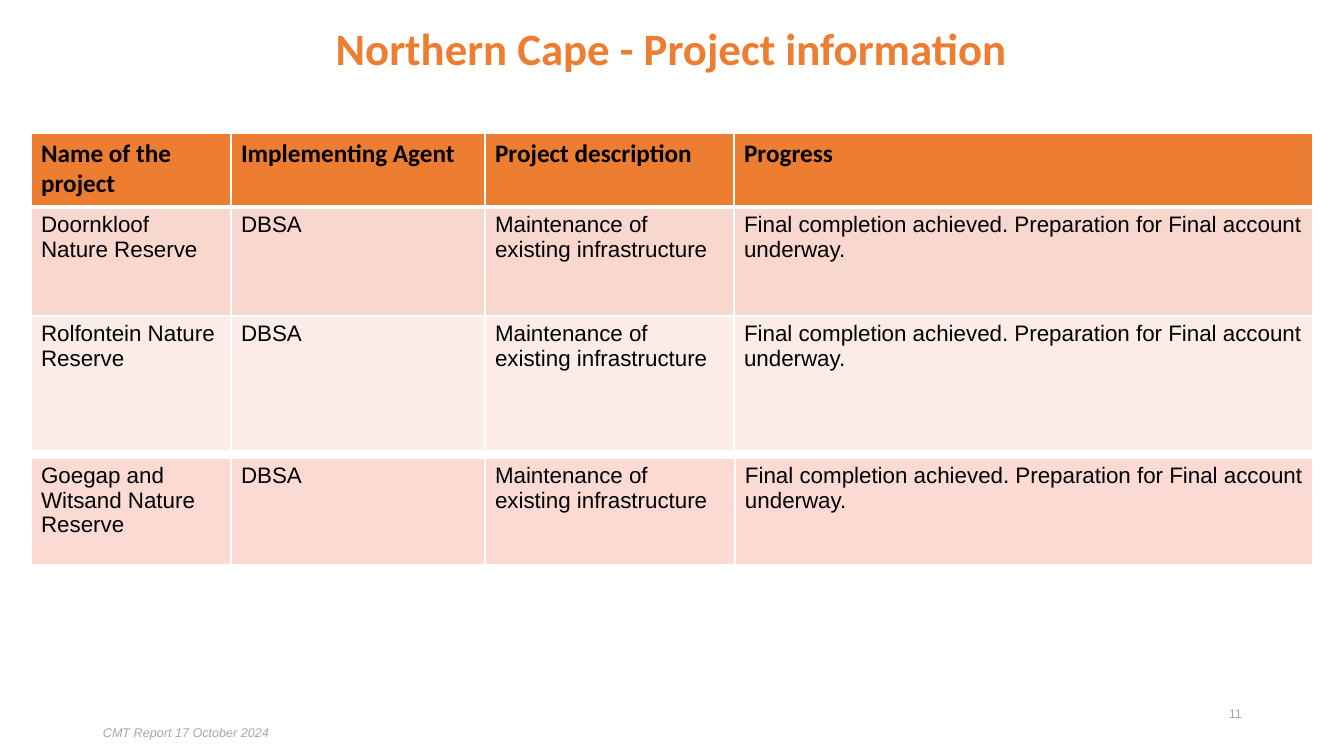
"""Build the Northern Cape project information slide."""
from dataclasses import dataclass

from lxml import etree
from pptx import Presentation
from pptx.dml.color import RGBColor
from pptx.enum.text import MSO_ANCHOR, MSO_AUTO_SIZE, PP_ALIGN
from pptx.oxml.ns import qn
from pptx.util import Emu, Pt

LEFT, CENTER, RIGHT, JUSTIFY = PP_ALIGN.LEFT, PP_ALIGN.CENTER, PP_ALIGN.RIGHT, PP_ALIGN.JUSTIFY
MIDDLE = MSO_ANCHOR.MIDDLE
NO_FIT = MSO_AUTO_SIZE.NONE
TITLE_ONLY = 5
THIN, THICK = 1, 3


@dataclass(frozen=True)
class Theme:
    """Colours, fonts and type sizes of the slide."""
    accent: str = "ED7D31"
    ink: str = "000000"
    muted: str = "A6A6A6"
    border: str = "FFFFFF"
    rows: tuple = ("F8D7CE", "FCECE8")
    last_row: str = "FADAD2"
    heading_font: str = "Calibri"
    body_font: str = "Arial"
    title_size: int = 32
    header_size: int = 18
    body_size: int = 16
    note_size: int = 9


def px(length):
    """Turn whole pixels into EMU."""
    return Emu(round(length * 914400 / 100.8))


class SlideBuilder:
    """Place styled elements on one slide."""

    def __init__(self, page, theme):
        """Keep the slide and its theme."""
        self.page = page
        self.theme = theme

    def set_text(self, frame, text, font, size, color, align=LEFT, bold=False, italic=False):
        """Put one formatted paragraph into a text frame."""
        frame.text = text
        para = frame.paragraphs[0]
        para.alignment = align
        para.font.name = font
        para.font.size = Pt(size)
        para.font.bold = bold
        para.font.italic = italic
        para.font.color.rgb = RGBColor.from_string(color)
        return para

    def title(self, text, left, top, width, height):
        """Move and format the title placeholder."""
        theme = self.theme
        shape = self.page.shapes.title
        shape.left, shape.top, shape.width, shape.height = map(px, (left, top, width, height))
        frame = shape.text_frame
        frame.auto_size = NO_FIT
        frame.vertical_anchor = MIDDLE
        para = self.set_text(frame, text, theme.heading_font, theme.title_size,
                             theme.accent, CENTER, bold=True)
        para.line_spacing = 0.9

    def note(self, text, left, top, width, height, align=LEFT, italic=False):
        """Add a small grey text box."""
        theme = self.theme
        box = self.page.shapes.add_textbox(*map(px, (left, top, width, height)))
        box.text_frame.word_wrap = True
        self.set_text(box.text_frame, text, theme.body_font, theme.note_size,
                      theme.muted, align, italic=italic)

    def borders(self, cell, top, bottom):
        """Draw the four borders of a cell, with widths in points."""
        properties = cell._tc.get_or_add_tcPr()
        widths = {"lnL": THIN, "lnR": THIN, "lnT": top, "lnB": bottom}
        for index, (side, width) in enumerate(widths.items()):
            line = etree.Element(qn(f"a:{side}"), w=str(Pt(width)))
            fill = etree.SubElement(line, qn("a:solidFill"))
            etree.SubElement(fill, qn("a:srgbClr"), val=self.theme.border)
            properties.insert(index, line)

    def table(self, left, top, widths, heights, rows, fills, header=False):
        """Add a table with one fill per row and an optional header row."""
        theme = self.theme
        frame = self.page.shapes.add_table(
            len(rows), len(widths), *map(px, (left, top, sum(widths), sum(heights))))
        table = frame.table
        table.first_row = header
        table.horz_banding = False
        for column, width in zip(table.columns, widths):
            column.width = px(width)
        for row_index, (texts, height, color) in enumerate(zip(rows, heights, fills)):
            table.rows[row_index].height = px(height)
            is_header = header and row_index == 0
            font, size = ((theme.heading_font, theme.header_size) if is_header
                          else (theme.body_font, theme.body_size))
            for column_index, text in enumerate(texts):
                cell = table.cell(row_index, column_index)
                cell.fill.solid()
                cell.fill.fore_color.rgb = RGBColor.from_string(color)
                align = JUSTIFY if column_index == 1 and not is_header else LEFT
                self.set_text(cell.text_frame, text, font, size, theme.ink, align,
                              bold=is_header)
                self.borders(cell, THICK if header and row_index == 1 else THIN,
                             THICK if is_header else THIN)


def project(name):
    """Return the table row of one project."""
    return (name, "DBSA", "Maintenance of existing infrastructure",
            "Final completion achieved. Preparation for Final account underway.")


def main():
    """Build and save the deck."""
    theme = Theme()
    deck = Presentation()
    deck.slide_width, deck.slide_height = px(1344), px(756)
    page = deck.slides.add_slide(deck.slide_layouts[TITLE_ONLY])
    builder = SlideBuilder(page, theme)
    builder.note("CMT Report 17 October 2024", 93, 720, 967, 21, italic=True)
    builder.note("11", 1090, 701, 162, 40, align=RIGHT)
    builder.title("Northern Cape - Project information", 237, 15, 869, 71)
    headings = ("Name of the project", "Implementing Agent", "Project description", "Progress")
    builder.table(31, 133, (200, 254, 249, 579), (74, 109, 135),
                  (headings, project("Doornkloof Nature Reserve"),
                   project("Rolfontein Nature Reserve")),
                  (theme.accent, *theme.rows), header=True)
    builder.table(31, 458, (200, 254, 250, 578), (107,),
                  (project("Goegap and Witsand Nature Reserve"),), (theme.last_row,))
    deck.save("out.pptx")


if __name__ == "__main__":
    main()
